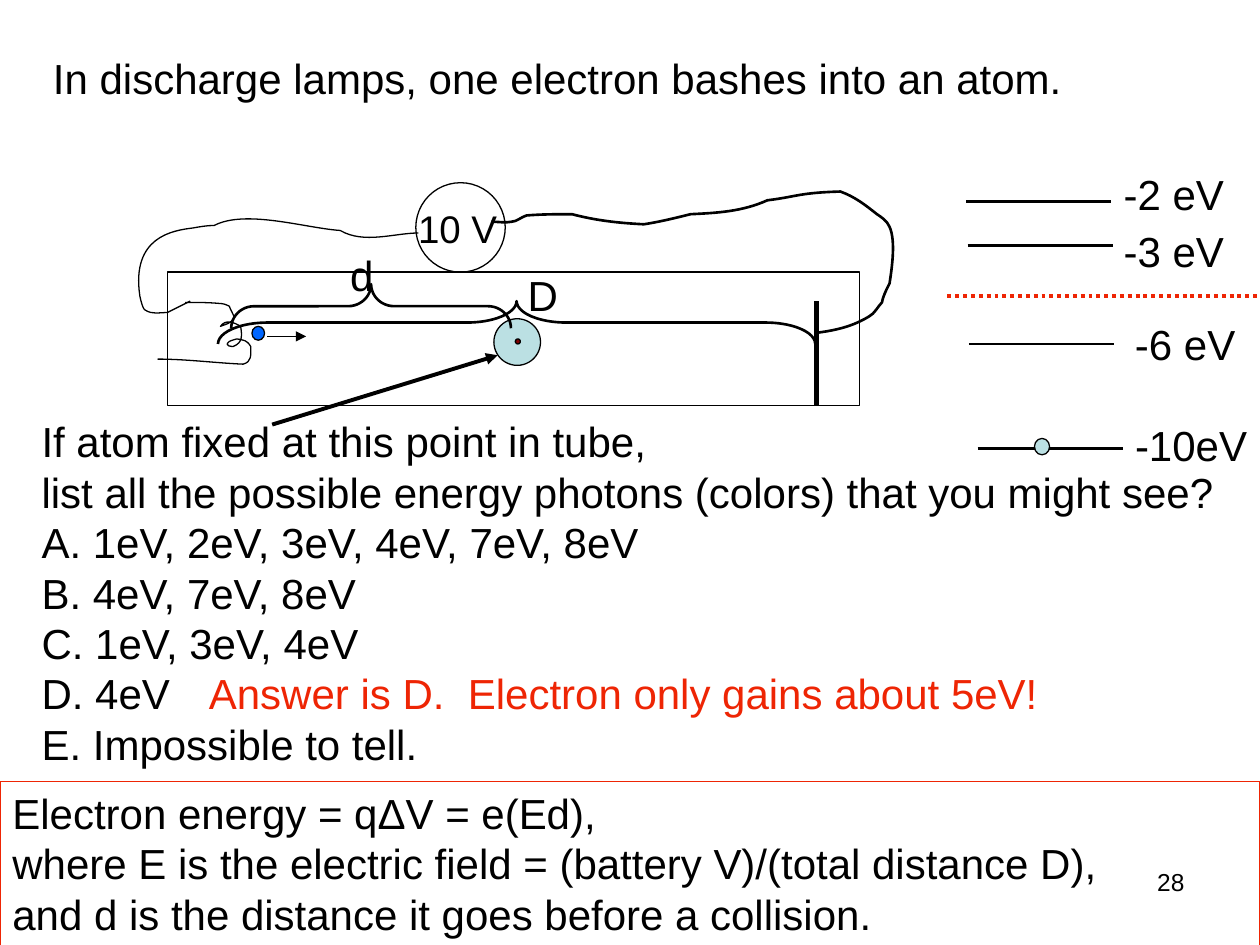
import dataclasses
import typing

import lxml.etree
import pptx
import pptx.dml.color
import pptx.enum.dml
import pptx.enum.shapes
import pptx.enum.text
import pptx.oxml.ns
import pptx.util

Inches = pptx.util.Inches
Shape = pptx.enum.shapes.MSO_SHAPE
Point = tuple[float, float]
Area = tuple[float, float, float, float]

COLORS = {"ink": "000000", "answer": "EE2504", "atom": "BBE0E3",
          "nucleus": "800000", "electron": "0066FF"}
UNITS_PER_INCH = 1000


@dataclasses.dataclass
class Level:
    start: Point
    label: str
    label_area: Area


@dataclasses.dataclass
class Label:
    text: str
    area: Area
    size: float = 24
    color: str = "ink"


@dataclasses.dataclass
class Outline:
    kind: Shape
    area: Area
    fill: str | None = None
    weight: float = 0.75
    rotation: float = 0
    bend: float | None = None


@dataclasses.dataclass
class Wire:
    """A start point followed by groups of three Bezier points."""
    points: list[Point]
    weight: float


LEVELS = [
    Level((7.67, 1.6), "-2 eV", (8.82, 1.29, 1, 0.5)),
    Level((7.68, 1.95), "-3 eV", (8.82, 1.74, 1, 0.5)),
    Level((7.69, 2.73), "-6 eV", (8.91, 2.48, 1, 0.5)),
    Level((7.76, 3.56), "-10eV", (8.91, 3.28, 1.09, 0.5)),
]
LEVEL_LENGTH = 1.15

LABELS = [
    Label("10 V", (3.22, 1.58, 0.83, 0.47), 22),
    Label("D", (4.09, 2.09, 0.44, 0.5)),
    Label("d", (2.68, 1.93, 0.39, 0.5)),
    Label("Answer is D.  Electron only gains about 5eV!",
          (1.56, 5.25, 6.87, 0.5), color="answer"),
]

ATOM = [
    Outline(Shape.OVAL, (3.92, 2.53, 0.37, 0.37), "atom"),
    Outline(Shape.OVAL, (4.09, 2.69, 0.04, 0.04), "nucleus"),
]
OUTLINES = [
    Outline(Shape.OVAL, (2, 2.59, 0.1, 0.11), "electron"),
    Outline(Shape.OVAL, (3.3, 1.45, 0.71, 0.71)),
    Outline(Shape.RECTANGLE, (1.33, 2.16, 5.49, 1.06)),
    Outline(Shape.LEFT_BRACE, (3.93, 0.19, 0.34, 4.74), None, 1.5, 90, 1.16),
    Outline(Shape.LEFT_BRACE, (2.77, 1.32, 0.35, 2.22), None, 1.5, 90, 0.52),
    Outline(Shape.OVAL, (8.21, 3.48, 0.12, 0.13), "atom"),
]

WIRES = [
    Wire([(1.47, 2.4), (1.57, 2.4), (1.66, 2.4), (1.76, 2.41),
          (1.78, 2.41), (1.82, 2.43), (1.82, 2.43), (1.83, 2.46), (1.85, 2.49), (1.86, 2.52),
          (1.83, 2.57), (1.8, 2.57), (1.75, 2.59), (1.79, 2.53), (1.86, 2.56), (1.91, 2.59),
          (1.92, 2.66), (1.93, 2.72), (1.85, 2.75), (1.85, 2.75), (1.77, 2.75), (1.82, 2.71),
          (1.84, 2.7), (1.88, 2.69), (1.88, 2.69), (1.94, 2.7), (1.96, 2.7), (1.99, 2.75),
          (1.99, 2.82), (2, 2.87), (1.93, 2.89), (1.7, 2.88), (1.48, 2.85), (1.25, 2.85)], 0.75),
    Wire([(1.51, 2.39), (1.45, 2.42), (1.39, 2.45), (1.33, 2.48),
          (1.27, 2.48), (1.21, 2.5), (1.15, 2.46), (1.13, 2.45), (1.11, 2.35), (1.11, 2.35),
          (1.04, 1.88), (1.37, 1.83), (1.53, 1.81), (1.59, 1.8), (1.64, 1.79), (1.7, 1.79),
          (1.95, 1.66), (2.42, 1.81), (2.7, 1.83), (2.89, 1.94), (3.13, 1.85), (3.32, 1.85)], 0.75),
    Wire([(6.49, 2.64), (6.64, 2.62), (6.77, 2.59), (6.9, 2.51),
          (6.94, 2.49), (6.97, 2.43), (7, 2.4), (7.01, 2.34), (7.06, 2.25), (7.06, 2.25),
          (7.08, 2.12), (7.11, 1.91), (7.06, 1.8), (7.04, 1.75), (6.99, 1.72), (6.96, 1.7),
          (6.86, 1.62), (6.78, 1.56), (6.67, 1.52), (6.34, 1.53), (6.33, 1.56), (6.09, 1.59),
          (5.89, 1.68), (5.69, 1.69), (5.48, 1.7), (5.36, 1.73), (5.24, 1.76), (5.11, 1.78),
          (4.91, 1.77), (4.73, 1.75), (4.54, 1.7), (4.42, 1.7), (4.3, 1.7), (4.18, 1.71),
          (4.14, 1.72), (4.1, 1.76), (4.06, 1.76), (4.01, 1.77), (3.96, 1.76), (3.9, 1.76)], 1.5),
]

QUESTION = """If atom fixed at this point in tube,
list all the possible energy photons (colors) that you might see?
A. 1eV, 2eV, 3eV, 4eV, 7eV, 8eV
B. 4eV, 7eV, 8eV
C. 1eV, 3eV, 4eV
D. 4eV
E. Impossible to tell."""
EXPLANATION = """Electron energy = qΔV = e(Ed),
where E is the electric field = (battery V)/(total distance D),
and d is the distance it goes before a collision."""


def rgb(name: str) -> pptx.dml.color.RGBColor:
    return pptx.dml.color.RGBColor.from_string(COLORS[name])


def apply(target: typing.Any, values: dict[str, typing.Any]) -> None:
    for name, value in values.items():
        setattr(target, name, value)


def write(box, text: str, size: float = 24, color: str = "ink", wrap: bool = True,
          align=pptx.enum.text.PP_ALIGN.LEFT) -> None:
    frame = box.text_frame
    frame.text = text
    apply(frame, {"word_wrap": wrap, "auto_size": pptx.enum.text.MSO_AUTO_SIZE.NONE,
                  "vertical_anchor": pptx.enum.text.MSO_ANCHOR.TOP})
    for para in frame.paragraphs:
        apply(para, {"alignment": align, "space_before": pptx.util.Pt(0)})
        for span in para.runs:
            apply(span.font, {"name": "Arial", "size": pptx.util.Pt(size)})
            span.font.color.rgb = rgb(color)


def fill_placeholder(box, area: Area, text: str, wrap: bool) -> None:
    apply(box, dict(zip(("left", "top", "width", "height"), map(Inches, area))))
    write(box, text, wrap=wrap)
    for para in box.text_frame.paragraphs:
        properties = para._p.get_or_add_pPr()
        properties.set("marL", "0")
        properties.set("indent", "0")
        lxml.etree.SubElement(properties, pptx.oxml.ns.qn("a:buNone"))


def add_label(page, label: Label, **options: typing.Any) -> None:
    box = page.shapes.add_textbox(*map(Inches, label.area))
    write(box, label.text, label.size, label.color, **{"wrap": False, **options})


def set_line(line, weight: float, color: str = "ink") -> None:
    line.color.rgb = rgb(color)
    line.width = pptx.util.Pt(weight)


def add_outline(shapes, outline: Outline, color: str = "ink"):
    shape = shapes.add_shape(outline.kind, *map(Inches, outline.area))
    shape.shadow.inherit = False
    shape.rotation = outline.rotation
    if outline.bend is not None:
        shape.adjustments[0] = outline.bend
    if outline.fill:
        shape.fill.solid()
        shape.fill.fore_color.rgb = rgb(outline.fill)
    else:
        shape.fill.background()
    set_line(shape.line, outline.weight, color)
    return shape


def add_line(page, start: Point, end: Point, weight: float, color: str = "ink",
             arrow: bool = False, dotted: bool = False) -> None:
    line = page.shapes.add_connector(pptx.enum.shapes.MSO_CONNECTOR.STRAIGHT,
                                     *map(Inches, start + end))
    set_line(line.line, weight, color)
    if dotted:
        line.line.dash_style = pptx.enum.dml.MSO_LINE.ROUND_DOT
    if arrow:
        lxml.etree.SubElement(line.line._get_or_add_ln(), pptx.oxml.ns.qn("a:tailEnd"), type="triangle")
    lxml.etree.SubElement(line._element.spPr, pptx.oxml.ns.qn("a:effectLst"))


def add_wire(page, wire: Wire) -> None:
    """Build the outline, then turn every three segments into one Bezier curve."""
    scaled = [(x * UNITS_PER_INCH, y * UNITS_PER_INCH) for x, y in wire.points]
    builder = page.shapes.build_freeform(*scaled[0], scale=Inches(1) / UNITS_PER_INCH)
    builder.add_line_segments(scaled[1:], close=False)
    shape = builder.convert_to_shape()
    segments = list(shape._element.iter(pptx.oxml.ns.qn("a:lnTo")))
    for first in range(0, len(segments), 3):
        curve = lxml.etree.Element(pptx.oxml.ns.qn("a:cubicBezTo"))
        segments[first].addprevious(curve)
        for segment in segments[first:first + 3]:
            curve.append(segment[0])
            segment.getparent().remove(segment)
    shape.shadow.inherit = False
    shape.fill.background()
    set_line(shape.line, wire.weight)


def main() -> None:
    deck = pptx.Presentation()
    apply(deck, {"slide_width": Inches(10), "slide_height": Inches(7.5)})
    page = deck.slides.add_slide(deck.slide_layouts[1])
    fill_placeholder(page.shapes.title, (0.32, 0.37, 8.21, 0.5),
                     "In discharge lamps, one electron bashes into an atom.", False)
    fill_placeholder(page.placeholders[1], (0.23, 3.25, 9.77, 2.9), QUESTION, True)

    for wire in WIRES:
        add_wire(page, wire)
    atom = page.shapes.add_group_shape()
    for part in ATOM:
        add_outline(atom.shapes, part)
    for level in LEVELS:
        left, top = level.start
        add_line(page, level.start, (left + LEVEL_LENGTH, top), 1.5)
        add_label(page, Label(level.label, level.label_area))
    for outline in OUTLINES:
        add_outline(page.shapes, outline)
    add_line(page, (6.48, 2.39), (6.48, 3.22), 3)
    add_line(page, (2.16, 3.37), (3.95, 2.82), 2.25, arrow=True)
    add_line(page, (2.12, 2.67), (2.43, 2.67), 0.75, arrow=True)
    add_line(page, (7.52, 2.35), (10, 2.35), 2.25, "answer", dotted=True)
    for label in LABELS:
        add_label(page, label)

    note = add_outline(page.shapes, Outline(Shape.RECTANGLE, (0, 6.2, 10, 1.31)), "answer")
    write(note, EXPLANATION)
    add_label(page, Label("28", (7.17, 6.83, 2.33, 0.52), 14), wrap=True,
              align=pptx.enum.text.PP_ALIGN.RIGHT)
    deck.save("out.pptx")


if __name__ == "__main__":
    main()
